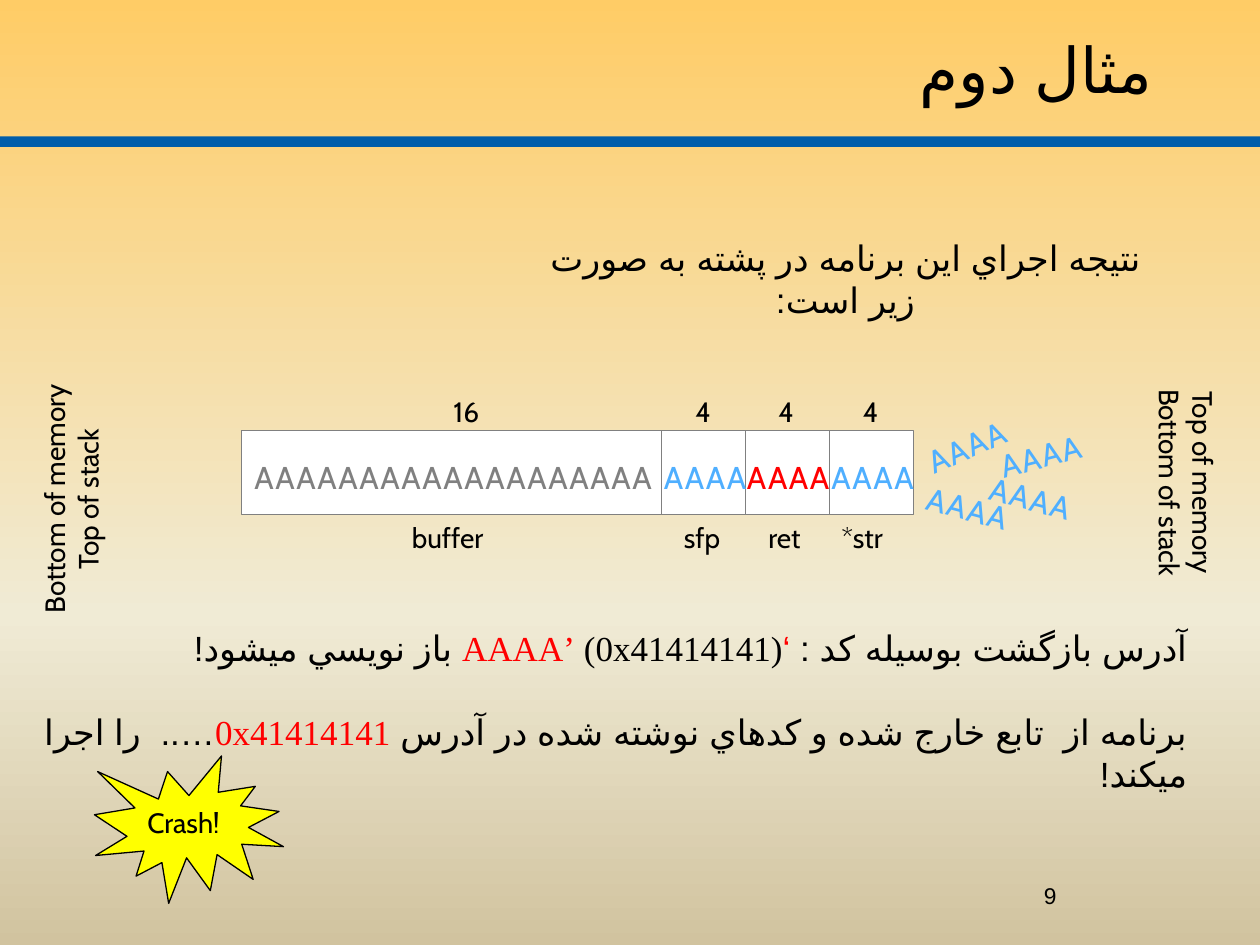
from copy import deepcopy
from dataclasses import dataclass
from math import cos, radians, sin

from lxml import etree
from pptx import Presentation
from pptx.dml.color import RGBColor
from pptx.enum import shapes, text
from pptx.oxml import ns
from pptx.util import Inches, Pt


@dataclass(frozen=True)
class Theme:
    black: str = "000000"
    white: str = "FFFFFF"
    grey: str = "808080"
    light_blue: str = "4FAFFF"
    red: str = "FF0000"
    yellow: str = "FFFF00"
    bar: str = "005DAA"
    background: tuple = ((0, "FFCC66"), (0.65, "F0EBD5"), (1, "D1C39F"))
    label_font: str = "Cabin"
    body_font: str = "Times New Roman"
    number_font: str = "Arial"
    persian_font: str = "Arial"
    title_size: int = 36
    body_size: int = 20
    letter_size: int = 18
    label_size: int = 16
    number_size: int = 13


THEME = Theme()
LETTER_STEP = 1 / 6
STACK_LEFT, STACK_TOP = 23 / 12, 41 / 12

# name, count, width in letters, name left, count left, letters, letters left, colour
STACK_CELLS = (
    ("buffer", "16", 20, 3.17, 3.5, "A" * 19, 1.92, THEME.grey),
    ("sfp", "4", 4, 5.33, 5.42, "AAAA", 5.17, THEME.light_blue),
    ("ret", "4", 4, 6, 6.08, "AAAA", 5.83, THEME.red),
    ("*str", "4", 4, 6.58, 6.75, "AAAA", 6.5, THEME.light_blue),
)
# left, top, rotation of the first letter of each overflowing word
OVERFLOW_WORDS = ((7.26, 3.77, 15), (7.27, 3.44, -24), (7.76, 3.69, 15), (7.84, 3.48, -15))


def rgb(colour):
    return RGBColor.from_string(colour)


def style_run(run, font, size, colour):
    run.font.name = font
    run.font.size = Pt(size)
    run.font.color.rgb = rgb(colour)


def set_right_to_left(paragraph):
    """Turn the paragraph's direction and give its runs the Persian typeface."""
    paragraph._p.get_or_add_pPr().set("rtl", "1")
    for run in paragraph.runs:
        properties = run._r.get_or_add_rPr()
        properties.set("lang", "fa-IR")
        etree.SubElement(properties, ns.qn("a:cs")).set("typeface", THEME.persian_font)


def paint_background(slide):
    fill = slide.background.fill
    fill.gradient()
    fill.gradient_angle = 270
    stop_list = fill._fill._gradFill.gsLst
    stop_list.append(deepcopy(stop_list[-1]))
    for stop, (position, colour) in zip(fill.gradient_stops, THEME.background):
        stop.position = position
        stop.color.rgb = rgb(colour)


def add_title(slide, wording):
    title = slide.shapes.title
    title.left, title.top = Inches(0.25), Inches(0.08)
    title.width, title.height = Inches(9), Inches(0.92)
    frame = title.text_frame
    frame.text = wording
    frame.vertical_anchor = text.MSO_ANCHOR.MIDDLE
    paragraph = frame.paragraphs[0]
    paragraph.alignment = text.PP_ALIGN.RIGHT
    style_run(paragraph.runs[0], THEME.label_font, THEME.title_size, THEME.black)
    set_right_to_left(paragraph)


def add_shape(slide, kind, box, fill, line=None, line_width=1):
    shape = slide.shapes.add_shape(kind, *map(Inches, box))
    shape.shadow.inherit = False
    shape.fill.solid()
    shape.fill.fore_color.rgb = rgb(fill)
    if line:
        shape.line.color.rgb = rgb(line)
        shape.line.width = Pt(line_width)
    else:
        shape.line.fill.background()
    return shape


def add_text(container, wording, box, size=THEME.label_size, colour=THEME.black,
             font=THEME.label_font, alignment=text.PP_ALIGN.LEFT,
             right_to_left=False, wrap=False, rotation=0):
    shape = container.add_textbox(*map(Inches, box))
    shape.rotation = rotation
    frame = shape.text_frame
    frame.text = wording
    frame.word_wrap = wrap
    if not wrap:
        frame.auto_size = text.MSO_AUTO_SIZE.SHAPE_TO_FIT_TEXT
    for paragraph in frame.paragraphs:
        paragraph.alignment = alignment
        for run in paragraph.runs:
            style_run(run, font, size, colour)
        if right_to_left:
            set_right_to_left(paragraph)


def add_letters(container, letters, left, top, colour, rotation=0):
    """Place letters from last to first along a line that turns with them."""
    angle = radians(rotation)
    for index in reversed(range(len(letters))):
        distance = index * LETTER_STEP
        box = (left + distance * cos(angle), top + distance * sin(angle), 0.38, 0.4)
        add_text(container, letters[index], box, THEME.letter_size, colour, rotation=rotation)


def add_stack(slide):
    left = STACK_LEFT
    for name, count, letter_count, name_left, count_left, *_ in STACK_CELLS:
        width = letter_count * LETTER_STEP
        add_shape(slide, shapes.MSO_SHAPE.RECTANGLE,
                  (left, STACK_TOP, width, 4 * LETTER_STEP), THEME.white, THEME.grey)
        left += width
        name_width = {"buffer": 1.02, "*str": 0.7}.get(name, 0.6)
        add_text(slide.shapes, name, (name_left, 4.08, name_width, 0.5))
        add_text(slide.shapes, count, (count_left, 3.08, 0.2 + 0.11 * len(count), 0.37))
    for *_, letters, letters_left, colour in STACK_CELLS:
        add_letters(slide.shapes, letters, letters_left, STACK_TOP + LETTER_STEP, colour)
    overflow = slide.shapes.add_group_shape()
    for word_left, top, rotation in OVERFLOW_WORDS:
        add_letters(overflow.shapes, "AAAA", word_left, top, THEME.light_blue, rotation)
    for wording, box, rotation in (
        ("Top of memory\nBottom of stack", (8.12, 3.38, 2.33, 0.9), 90),
        ("Bottom of memory\nTop of stack", (-0.68, 3.51, 2.75, 0.9), 270),
    ):
        add_text(slide.shapes, wording, box, alignment=text.PP_ALIGN.CENTER, rotation=rotation)


def add_conclusion(slide):
    box = slide.shapes.add_textbox(Inches(0.25), Inches(4.92), Inches(9.27), Inches(1.11))
    frame = box.text_frame
    frame.word_wrap = True
    sentences = (
        ("آدرس بازگشت بوسيله کد : ", "‘AAAA’ ", "(0x41414141) باز نويسي ميشود!"),
        ("برنامه از  تابع خارج شده و کدهاي نوشته شده در آدرس ", "0x41414141",
         "…..  را اجرا ميکند!"),
    )
    paragraphs = (frame.paragraphs[0], frame.add_paragraph())
    for paragraph, parts in zip(paragraphs, sentences):
        paragraph.alignment = text.PP_ALIGN.RIGHT
        for part, colour in zip(parts, (THEME.black, THEME.red, THEME.black)):
            run = paragraph.add_run()
            run.text = part
            style_run(run, THEME.body_font, THEME.body_size, colour)
        set_right_to_left(paragraph)
    paragraphs[1].space_before = Pt(24)


def add_crash(slide):
    burst = add_shape(slide, shapes.MSO_SHAPE.EXPLOSION1, (0.75, 6, 1.5, 1.17),
                      THEME.yellow, THEME.black, 0.75)
    frame = burst.text_frame
    frame.text = "Crash!"
    frame.vertical_anchor = text.MSO_ANCHOR.TOP
    paragraph = frame.paragraphs[0]
    paragraph.alignment = text.PP_ALIGN.LEFT
    style_run(paragraph.runs[0], THEME.label_font, THEME.label_size, THEME.black)


def main():
    presentation = Presentation()
    presentation.slide_width, presentation.slide_height = Inches(10), Inches(7.5)
    slide = presentation.slides.add_slide(presentation.slide_layouts.get_by_name("Title Only"))
    paint_background(slide)
    add_shape(slide, shapes.MSO_SHAPE.RECTANGLE, (0, 13 / 12, 10, 1 / 12), THEME.bar)
    add_title(slide, "مثال دوم")
    add_text(slide.shapes, "نتيجه اجراي اين برنامه در پشته به صورت زير است:",
             (4.17, 1.83, 5.08, 0.44), THEME.body_size, font=THEME.body_font,
             alignment=text.PP_ALIGN.CENTER, right_to_left=True, wrap=True)
    add_stack(slide)
    add_conclusion(slide)
    add_crash(slide)
    add_text(slide.shapes, "9", (7.17, 6.95, 2.33, 0.4), THEME.number_size,
             font=THEME.number_font, alignment=text.PP_ALIGN.CENTER,
             right_to_left=True, wrap=True)
    presentation.save("out.pptx")


if __name__ == "__main__":
    main()
